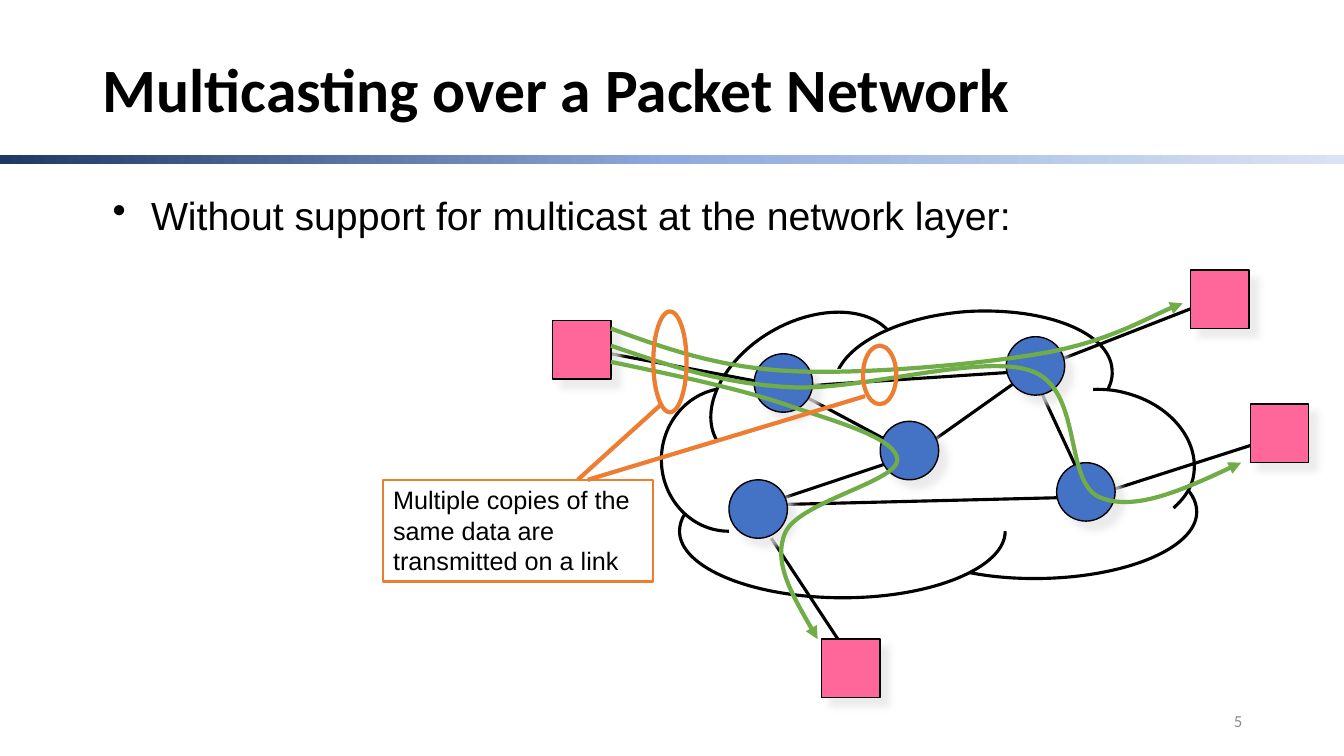
from copy import deepcopy
from lxml.etree import SubElement
from pptx import Presentation
from pptx.dml.color import RGBColor
from pptx.enum.shapes import MSO_CONNECTOR, MSO_SHAPE
from pptx.enum.text import MSO_ANCHOR, PP_ALIGN
from pptx.oxml import parse_xml
from pptx.oxml.ns import nsdecls, qn
from pptx.util import Inches, Pt

WIDE, HIGH = 13.33, 7.5
SIDE = 0.58  # every node and host
HEX = dict(ink="000000", paper="FFFFFF", node="4472C4", host="FF6699",
           flow="70AD47", note="ED7D31", page="8C8C8C", shade="E7E6E6")
BAR = [(0, "203864"), (50, "8FAADC"), (100, "DAE3F3")]

TITLE = "Multicasting over a Packet Network"
POINT = "Without support for multicast at the network layer:"
NOTE = "Multiple copies of the same data are transmitted on a link"

# Each lobe: curve points (start, then triples), then the points that close its fill
LOBES = [
    ([(9.61, 5.68), (9.81, 5.72), (10.03, 5.74), (10.26, 5.74),
      (11.15, 5.74), (11.87, 5.44), (11.87, 5.08),
      (11.87, 4.97), (11.81, 4.87), (11.7, 4.78)], [(10.26, 5.08), (9.61, 5.68)]),
    ([(6.95, 4.94), (6.81, 5.04), (6.74, 5.15), (6.74, 5.27),
      (6.74, 5.63), (7.46, 5.93), (8.36, 5.93),
      (9.25, 5.93), (9.97, 5.63), (9.97, 5.27)], [(8.36, 5.27), (6.95, 4.94)]),
    ([(7.56, 3.94), (7.46, 3.88), (7.34, 3.85), (7.23, 3.85),
      (6.86, 3.85), (6.56, 4.17), (6.56, 4.56),
      (6.56, 4.95), (6.86, 5.27), (7.23, 5.27)], [(7.23, 4.56), (7.56, 3.94)]),
    ([(8.75, 4.05), (8.93, 3.8), (8.97, 3.54), (8.86, 3.35),
      (8.68, 3.04), (8.13, 3.01), (7.65, 3.29),
      (7.17, 3.57), (6.93, 4.06), (7.11, 4.37)], [(7.98, 3.86), (8.75, 4.05)]),
    ([(10.47, 4.25), (10.84, 4.1), (11.05, 3.89), (11.03, 3.67),
      (11.01, 3.3), (10.38, 3.05), (9.61, 3.09),
      (8.85, 3.14), (8.26, 3.48), (8.28, 3.84)], [(9.66, 3.75), (10.47, 4.25)]),
    ([(11.64, 5.04), (11.73, 4.96), (11.8, 4.87), (11.83, 4.76),
      (11.92, 4.4), (11.63, 4.02), (11.17, 3.9),
      (10.92, 3.83), (10.65, 3.86), (10.46, 3.97)], [(11, 4.54), (11.64, 5.04)]),
]
FLOWS = [
    [(6.06, 3.26), (6.58, 3.45), (7.1, 3.64), (7.81, 3.68),
     (8.52, 3.72), (9.66, 3.62), (10.31, 3.51),
     (10.97, 3.4), (11.49, 3.09), (11.73, 3.01)],
    [(6.06, 3.59), (6.73, 3.73), (7.4, 3.87), (7.87, 4.04),
     (8.35, 4.2), (8.91, 4.36), (8.9, 4.57),
     (8.88, 4.78), (7.93, 4.98), (7.79, 5.28),
     (7.66, 5.57), (7.89, 5.96), (8.11, 6.34)],
    [(6.06, 3.43), (6.59, 3.61), (7.12, 3.8), (7.81, 3.84),
     (8.51, 3.89), (9.72, 3.5), (10.23, 3.68),
     (10.74, 3.86), (10.55, 4.77), (10.9, 4.93),
     (11.24, 5.08), (11.78, 4.84), (12.31, 4.59)],
]
WEST, EAST, MID, LOW = (7.81, 3.84), (10.23, 3.68), (9.06, 4.51), (10.81, 4.93)
BASE = (7.56, 5.01)
LINKS = [(BASE, LOW), (EAST, LOW), (MID, WEST), (MID, EAST), (BASE, MID),
         (EAST, WEST), (WEST, (6.06, 3.51)), ((12.15, 2.93), EAST),
         ((12.65, 4.34), LOW), ((8.31, 6.34), (7.65, 5.34))]
NODES = [(8.73, 4.18), (7.23, 4.76), (9.98, 3.34), (10.48, 4.59), (7.48, 3.51)]
HOSTS = [(5.48, 3.18), (11.81, 2.68), (12.4, 4.01), (8.15, 6.34)]
RINGS = [((6.48, 3.09, 0.33, 1), (6.56, 4.01), (5.73, 4.76)),
         ((8.56, 3.43, 0.33, 0.58), (8.58, 3.93), (5.83, 4.76))]

deck = Presentation()
deck.slide_width, deck.slide_height = Inches(WIDE), Inches(HIGH)
shapes = deck.slides.add_slide(deck.slide_layouts[6]).shapes


def tint(name):
    return RGBColor.from_string(HEX[name])


def paint(shape, fill, line, width=1):
    shape.shadow.inherit = False
    if fill:
        shape.fill.solid()
        shape.fill.fore_color.rgb = tint(fill)
    else:
        shape.fill.background()
    if line:
        shape.line.color.rgb = tint(line)
        shape.line.width = Pt(width)
    else:
        shape.line.fill.background()
    return shape


def draw(kind, box, fill=None, line=None, width=1):
    return paint(shapes.add_shape(kind, *map(Inches, box)), fill, line, width)


def join(start, end, color, width):
    line = shapes.add_connector(MSO_CONNECTOR.STRAIGHT, *map(Inches, start + end))
    line.line.color.rgb = tint(color)
    line.line.width = Pt(width)
    SubElement(line._element.spPr, qn("a:effectLst"))


def bend(points, color, width, close=()):
    """Draw Bezier curves; the close points bound a white fill without a line."""
    spots = [(Inches(x), Inches(y)) for x, y in [*points, *close]]
    pen = shapes.build_freeform(*spots[0], scale=1.0)
    pen.add_line_segments(spots[1:], close=False)
    shape = paint(pen.convert_to_shape(), "paper" if close else None, color, width)
    route = shape._element.spPr.find(".//" + qn("a:path"))
    steps = route.findall(qn("a:lnTo"))
    for i in range(0, len(points) - 1, 3):
        curve = SubElement(route, qn("a:cubicBezTo"))
        for step in steps[i:i + 3]:
            curve.append(step[0])
            route.remove(step)
    for step in steps[len(points) - 1:]:
        route.remove(step)
    if close:
        area = deepcopy(route)
        area.set("stroke", "0")
        area.extend(steps[len(points) - 1:])
        SubElement(area, qn("a:close"))
        route.addnext(area)
    route.set("fill", "none")
    return shape


def shade(shape):
    cast = SubElement(shape._element.spPr.find(qn("a:effectLst")), qn("a:outerShdw"),
                      blurRad=str(Pt(5)), dist=str(Pt(8.5)), dir="2700000",
                      algn="ctr", rotWithShape="0")
    color = SubElement(cast, qn("a:srgbClr"), val=HEX["shade"])
    SubElement(color, qn("a:alpha"), val="75000")


def write(shape, words, size, font="Arial", color="ink", lead=None,
          anchor=MSO_ANCHOR.TOP, align=PP_ALIGN.LEFT):
    """Set the text; lead is the space before, in percent."""
    frame = shape.text_frame
    frame.word_wrap = True
    frame.vertical_anchor = anchor
    para = frame.paragraphs[0]
    para.text = words
    para.alignment = align
    para.font.size, para.font.name = Pt(size), font
    para.font.color.rgb = tint(color)
    if lead:
        para.space_before = Pt(0)
        gap = para._p.pPr.find(qn("a:spcBef"))
        gap.remove(gap[0])
        SubElement(gap, qn("a:spcPct"), val=str(lead * 1000))
    return para


def label(box, *args, **more):
    return write(shapes.add_textbox(*map(Inches, box)), *args, **more)


bar = draw(MSO_SHAPE.RECTANGLE, (0, 1.54, WIDE, 0.09), "paper")
stops = "".join(f'<a:gs pos="{at * 1000}"><a:srgbClr val="{c}"/></a:gs>' for at, c in BAR)
look = bar._element.spPr
look.replace(look.find(qn("a:solidFill")), parse_xml(
    f'<a:gradFill {nsdecls("a")}><a:gsLst>{stops}</a:gsLst><a:lin ang="0" scaled="0"/></a:gradFill>'))

title = label((0.92, 0.4, 11.5, 1.04), TITLE, 44, "Calibri", anchor=MSO_ANCHOR.MIDDLE)
title.font.bold = True
title.line_spacing = 0.9

draw(MSO_SHAPE.RECTANGLE, (7.23, 4.23, 4.19, 1.23), "paper")
for curve, close in LOBES:
    bend(curve, "ink", 2.25, close)
draw(MSO_SHAPE.RECTANGLE, (7.42, 3.66, 3.42, 1.23), "paper")

point = label((1.02, 1.85, 9.23, 1.58), POINT, 28, lead=20)
props = point._p.pPr
props.set("marL", str(Inches(0.38)))
props.set("indent", str(-Inches(0.38)))
mark = parse_xml(f'<a:buChar {nsdecls("a")} char="•"/>')
props.find(qn("a:spcBef")).addnext(mark)

for start, end in LINKS:
    join(start, end, "ink", 2.25)
for kind, fill, spots in ((MSO_SHAPE.OVAL, "node", NODES),
                          (MSO_SHAPE.RECTANGLE, "host", HOSTS)):
    for spot in spots:
        shade(draw(kind, (*spot, SIDE, SIDE), fill, "ink"))
for curve in FLOWS:
    flow = bend(curve, "flow", 3)
    SubElement(flow.line._get_or_add_ln(), qn("a:tailEnd"), type="triangle")
for ring, start, end in RINGS:
    draw(MSO_SHAPE.OVAL, ring, None, "note", 3)
    join(start, end, "note", 3)

note = draw(MSO_SHAPE.RECTANGLE, (3.8, 4.76, 2.68, 1.01), None, "note", 1.5)
write(note, NOTE, 18, lead=50).space_after = Pt(10)
label((9.42, 6.95, 3, 0.4), "5", 12, "Calibri", "page",
      anchor=MSO_ANCHOR.MIDDLE, align=PP_ALIGN.RIGHT)

deck.save("out.pptx")
